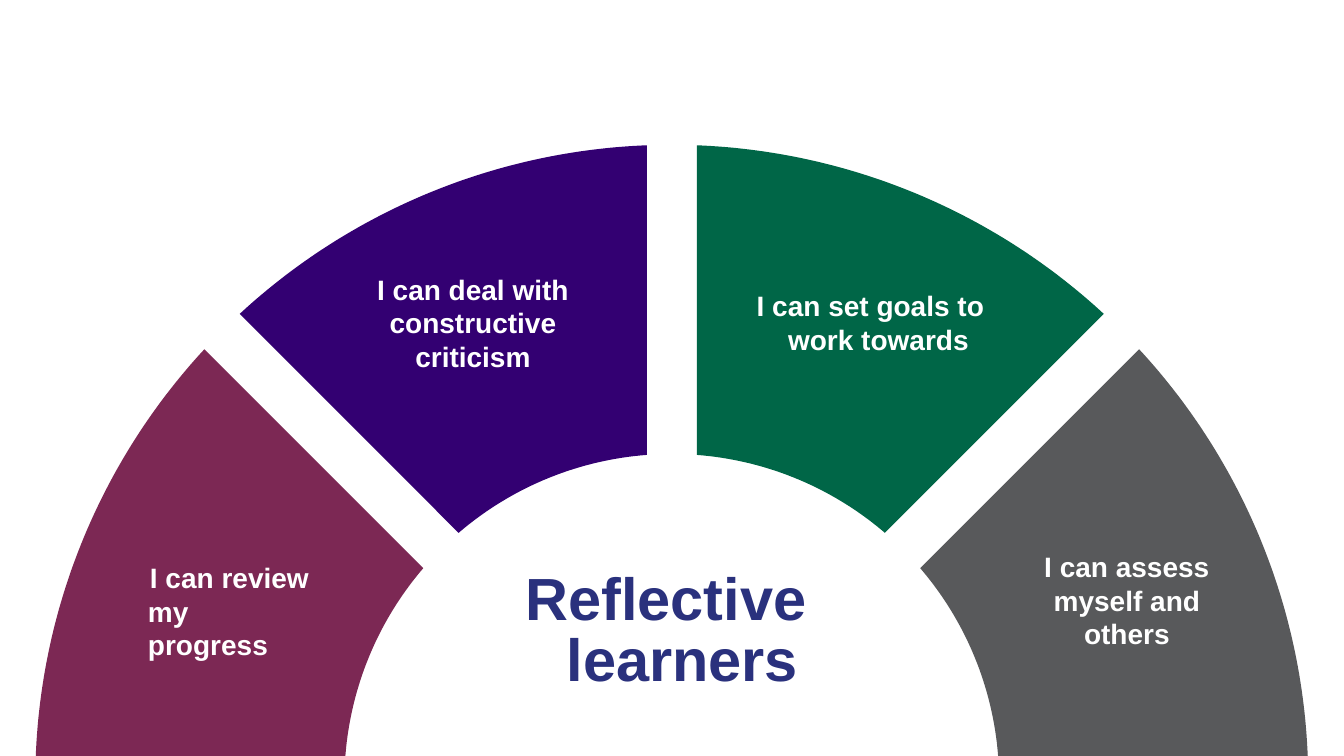
"""Build a slide with a fan of four segments around the words Reflective learners."""
import math
from dataclasses import dataclass

import pptx
import pptx.dml.color
import pptx.enum.text
import pptx.util

Cm = pptx.util.Cm
Pt = pptx.util.Pt


@dataclass(frozen=True)
class Theme:
    font: str = "Arial"
    segments: tuple = ("7C2854", "330072", "006647", "58595B")
    label: str = "FFFFFF"
    heading: str = "2A317D"
    label_size: float = 20
    heading_size: float = 42.5
    heading_line: float = 43


theme = Theme()


def arc(radius, start, end, steps=60):
    """Return points between two spokes, inset by half the gap at each end."""
    inset = math.asin(HALF_GAP / radius)
    first, last = math.radians(start) - inset, math.radians(end) + inset
    angles = [first + (last - first) * step / steps for step in range(steps + 1)]
    return [(Cm(CENTRE_X + radius * math.cos(angle)),
             Cm(CENTRE_Y - radius * math.sin(angle))) for angle in angles]


def write(shape, box, lines, size, color, alignment, margin=0.0, indent=0.0, top=0.03):
    """Place a text shape and fill it with one paragraph."""
    shape.left, shape.top, shape.width, shape.height = [Cm(length) for length in box]
    frame = shape.text_frame
    frame.word_wrap = True
    frame.auto_size = pptx.enum.text.MSO_AUTO_SIZE.NONE
    frame.vertical_anchor = pptx.enum.text.MSO_ANCHOR.TOP
    frame.margin_left = frame.margin_right = frame.margin_bottom = 0
    frame.margin_top = Cm(top)
    paragraph = frame.paragraphs[0]
    paragraph.alignment = alignment
    properties = paragraph._p.get_or_add_pPr()
    properties.set("marL", str(Cm(margin)))
    properties.set("indent", str(Cm(indent)))
    for number, line in enumerate(lines):
        if number:
            paragraph.add_line_break()
        run = paragraph.add_run()
        run.text = line
        run.font.name = theme.font
        run.font.size = Pt(size)
        run.font.bold = True
        run.font.color.rgb = pptx.dml.color.RGBColor.from_string(color)
    return paragraph


CENTRE_X, CENTRE_Y = 16.93, 19.69
OUTER_RADIUS, INNER_RADIUS = 16.04, 8.25
HALF_GAP = 0.63
SEGMENT_ANGLE = 45

presentation = pptx.Presentation()
presentation.slide_width = Cm(33.87)
presentation.slide_height = Cm(19.05)
slide = presentation.slides.add_slide(presentation.slide_layouts[5])

for index, color in enumerate(theme.segments):
    start = 180 - index * SEGMENT_ANGLE
    end = start - SEGMENT_ANGLE
    outline = arc(OUTER_RADIUS, start, end) + arc(INNER_RADIUS, start, end)[::-1]
    builder = slide.shapes.build_freeform(*outline[0])
    builder.add_line_segments(outline[1:], close=True)
    segment = builder.convert_to_shape()
    segment.shadow.inherit = False
    segment.fill.solid()
    segment.fill.fore_color.rgb = pptx.dml.color.RGBColor.from_string(color)
    segment.line.fill.background()

LEFT = pptx.enum.text.PP_ALIGN.LEFT
CENTER = pptx.enum.text.PP_ALIGN.CENTER

title = slide.shapes.title
slide.shapes._spTree.append(title._element)
write(title, (9.47, 6.83, 4.9, 2.62), ["I can deal with constructive criticism"],
      theme.label_size, theme.label, CENTER)

labels = [
    ((3.63, 14.1, 4.32, 2.62), ["I can review", "my", "progress"], LEFT, 0.1, 0.05),
    ((19.05, 7.24, 5.79, 1.75), ["I can set goals to work towards"], LEFT, 0.81, -0.79),
    ((26.29, 13.82, 4.22, 2.62), ["I can assess myself and others"], CENTER, 0, 0),
]
for box, lines, alignment, margin, indent in labels:
    label = slide.shapes.add_textbox(0, 0, 0, 0)
    write(label, box, lines, theme.label_size, theme.label, alignment, margin, indent)

heading = slide.shapes.add_textbox(0, 0, 0, 0)
heading_paragraph = write(heading, (13.21, 14.1, 7.16, 3.4), ["Reflective learners"],
                          theme.heading_size, theme.heading, LEFT, 1.07, -1.04, 0.33)
heading_paragraph.line_spacing = Pt(theme.heading_line)

presentation.save("out.pptx")
